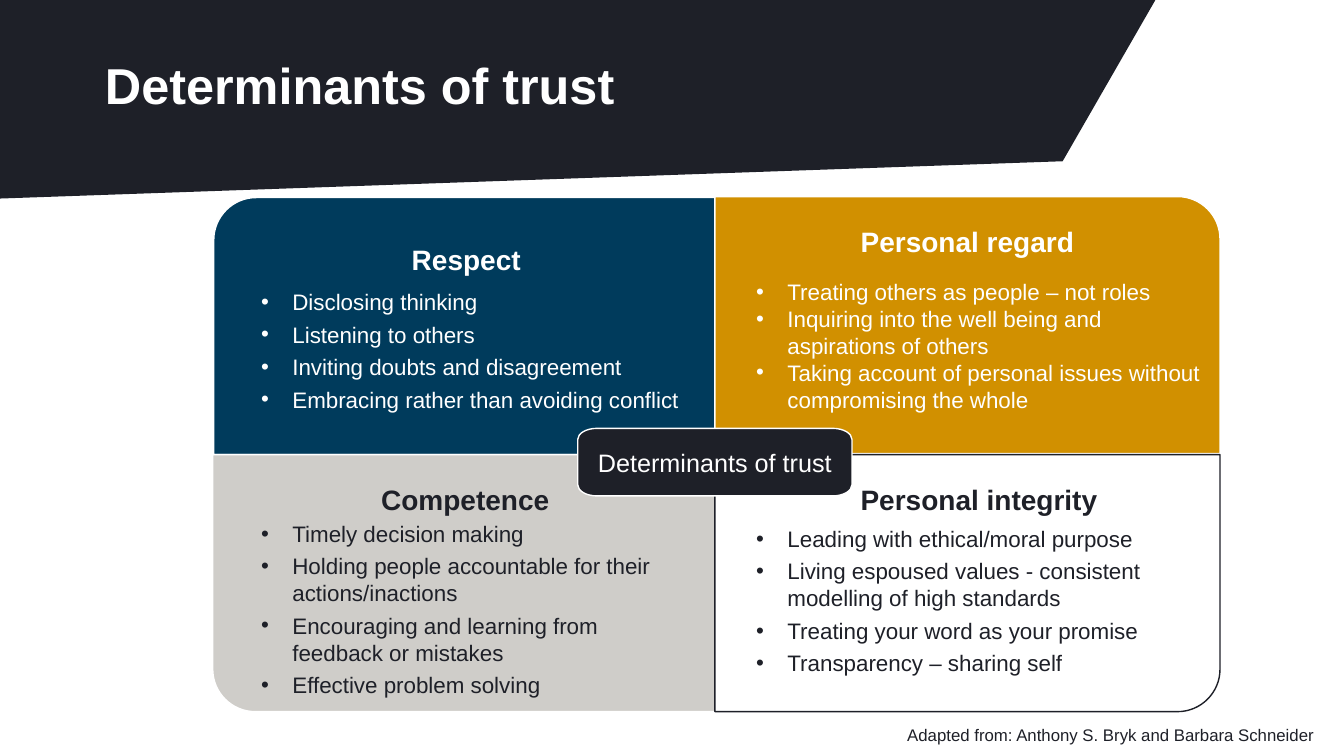
from lxml.etree import SubElement
from pptx import Presentation
from pptx.dml.color import RGBColor
from pptx.enum.text import MSO_ANCHOR, MSO_AUTO_SIZE, PP_ALIGN
from pptx.oxml.ns import qn
from pptx.util import Pt

PX = 9144  # EMU in one px, 100 px to the inch
FONT = "Arial"
WHITE = RGBColor(0xFF, 0xFF, 0xFF)
INK = RGBColor(0x1E, 0x20, 0x28)
NAVY = RGBColor(0x00, 0x3B, 0x5C)
GOLD = RGBColor(0xD1, 0x90, 0x00)
GREY = RGBColor(0xCF, 0xCD, 0xC9)

TOP_LEFT, TOP_RIGHT, BOTTOM_RIGHT, BOTTOM_LEFT = range(4)
QUADRANT_SIZE = (501, 255)
QUADRANT_RADII = (42, 42)
ARC_HANDLE = 0.55  # handle length of a quarter arc, as a share of its radius

# heading, left, top, rounded corner, fill, line, text colour, left inset, line spacing
QUADRANTS = [
    ("Respect", 212, 196, TOP_LEFT, NAVY, WHITE, WHITE, 12, 1.5),
    ("Personal regard", 709, 195, TOP_RIGHT, GOLD, WHITE, WHITE, 12, 1),
    ("Competence", 211, 451, BOTTOM_LEFT, GREY, WHITE, INK, 12, 1),
    ("Personal integrity", 709, 451, BOTTOM_RIGHT, WHITE, INK, INK, 35, 1),
]

# placeholder index, position and size, text colour, space after, items
LISTS = [
    (1, (249, 281, 559, 135), WHITE, 4, [
        "Disclosing thinking",
        "Listening to others",
        "Inviting doubts and disagreement",
        "Embracing rather than avoiding conflict",
    ]),
    (2, (740, 271, 461, 145), WHITE, 0, [
        "Treating others as people – not roles",
        "Inquiring into the well being and aspirations of others",
        "Taking account of personal issues without compromising the whole",
    ]),
    (3, (249, 511, 559, 188), INK, 4, [
        "Timely decision making",
        "Holding people accountable for their\nactions/inactions",
        "Encouraging and learning from\nfeedback or mistakes",
        "Effective problem solving",
    ]),
    (4, (740, 516, 507, 162), INK, 4, [
        "Leading with ethical/moral purpose",
        "Living espoused values - consistent\nmodelling of high standards",
        "Treating your word as your promise",
        "Transparency – sharing self",
    ]),
]


def add_span(para, text, size, color, bold=False):
    span = para.add_run()
    span.text = text
    span.font.name = FONT
    span.font.size = Pt(size)
    span.font.bold = bold
    span.font.color.rgb = color


def place(box, left, top, width, height):
    box.left, box.top = left * PX, top * PX
    box.width, box.height = width * PX, height * PX


def set_insets(frame, left, top, right, bottom):
    frame.margin_left, frame.margin_top = left * PX, top * PX
    frame.margin_right, frame.margin_bottom = right * PX, bottom * PX


def add_panel(page, points, fill, line=None):
    """Closed outline that lies behind the placeholders."""
    (start_x, start_y), *others = [(x * PX, y * PX) for x, y in points]
    builder = page.shapes.build_freeform(start_x, start_y, scale=1.0)
    builder.add_line_segments(others, close=True)
    panel = builder.convert_to_shape()
    panel.shadow.inherit = False
    panel.fill.solid()
    panel.fill.fore_color.rgb = fill
    if line is None:
        panel.line.fill.background()
    else:
        panel.line.color.rgb = line
        panel.line.width = Pt(1)
    page.shapes.title.element.addprevious(panel.element)
    return panel


def bend(panel, curve_starts):
    """Turn the three segments after each listed point into one curve."""
    outline = next(panel.element.iter(qn("a:path")))
    segments = list(outline)
    for start in curve_starts:
        curve = SubElement(outline, qn("a:cubicBezTo"))
        segments[start].addnext(curve)
        for segment in segments[start + 1:start + 4]:
            curve.append(segment[0])
            outline.remove(segment)


def add_rounded_panel(page, left, top, size, radii, corners, fill, line):
    """Rectangle with a quarter arc at each listed corner, drawn clockwise."""
    width, height = size
    points, curve_starts = [], []
    for corner in range(4):
        at_right = corner in (TOP_RIGHT, BOTTOM_RIGHT)
        at_bottom = corner in (BOTTOM_RIGHT, BOTTOM_LEFT)
        x, y = left + width * at_right, top + height * at_bottom
        if corner not in corners:
            points.append((x, y))
            continue
        inward_x = -radii[0] if at_right else radii[0]
        inward_y = -radii[1] if at_bottom else radii[1]
        handle = 1 - ARC_HANDLE
        arc = [(x, y + inward_y), (x, y + inward_y * handle),
               (x + inward_x * handle, y), (x + inward_x, y)]
        if corner in (TOP_RIGHT, BOTTOM_LEFT):
            arc.reverse()
        curve_starts.append(len(points))
        points += arc
    panel = add_panel(page, points, fill, line)
    bend(panel, curve_starts)
    return panel


def label_panel(panel, text, size, color, insets, anchor, bold=False, spacing=1):
    frame = panel.text_frame
    frame.word_wrap = True
    frame.vertical_anchor = anchor
    set_insets(frame, *insets)
    para = frame.paragraphs[0]
    para.alignment = PP_ALIGN.CENTER
    para.line_spacing = spacing
    add_span(para, text, size, color, bold)


def add_bullet(para):
    properties = para._p.get_or_add_pPr()
    properties.set("marL", str(31 * PX))
    properties.set("indent", str(-31 * PX))
    SubElement(properties, qn("a:buFont"), typeface=FONT)
    SubElement(properties, qn("a:buChar"), char="•")


def add_break(para, size):
    para.add_line_break()
    SubElement(para._p[-1], qn("a:rPr"), sz=str(size * 100))


def fill_list(box, area, color, space_after, items, size=16):
    place(box, *area)
    frame = box.text_frame
    frame.word_wrap = True
    frame.auto_size = MSO_AUTO_SIZE.NONE
    frame.vertical_anchor = MSO_ANCHOR.TOP
    for index, item in enumerate(items):
        para = frame.add_paragraph() if index else frame.paragraphs[0]
        add_bullet(para)
        para.space_before = Pt(0)
        para.space_after = Pt(space_after)
        for number, text in enumerate(item.split("\n")):
            if number:
                add_break(para, size)
            add_span(para, text, size, color)


def fill_title(title, text):
    place(title, 94, 59, 878, 54)
    frame = title.text_frame
    frame.auto_size = MSO_AUTO_SIZE.NONE
    frame.vertical_anchor = MSO_ANCHOR.MIDDLE
    para = frame.paragraphs[0]
    para.alignment = PP_ALIGN.LEFT
    para.line_spacing = Pt(40)
    add_span(para, text, 36, WHITE, bold=True)


def add_credit(page, text):
    box = page.shapes.add_textbox(890 * PX, 714 * PX, 846 * PX, 30 * PX)
    box.text_frame.word_wrap = True
    add_span(box.text_frame.paragraphs[0], text, 12, INK)


def main():
    deck = Presentation()
    deck.slide_width, deck.slide_height = 1333 * PX, 750 * PX
    page = deck.slides.add_slide(deck.slide_layouts.get_by_name("Comparison"))

    add_panel(page, [(1146, 0), (0, 0), (0, 197), (1054, 160)], INK)
    fill_title(page.shapes.title, "Determinants of trust")

    for heading, left, top, corner, fill, line, color, inset, spacing in QUADRANTS:
        quadrant = add_rounded_panel(page, left, top, QUADRANT_SIZE, QUADRANT_RADII,
                                     [corner], fill, line)
        label_panel(quadrant, heading, 20, color, (inset, 28, 12, 12),
                    MSO_ANCHOR.TOP, bold=True, spacing=spacing)

    hub = add_rounded_panel(page, 573, 425, (272, 67), (19, 11), range(4), INK, WHITE)
    label_panel(hub, "Determinants of trust", 18, WHITE, (14, 14, 14, 14),
                MSO_ANCHOR.MIDDLE)

    for index, area, color, space_after, items in LISTS:
        fill_list(page.placeholders[index], area, color, space_after, items)

    add_credit(page, "Adapted from: Anthony S. Bryk and Barbara Schneider")
    deck.save("out.pptx")


if __name__ == "__main__":
    main()
